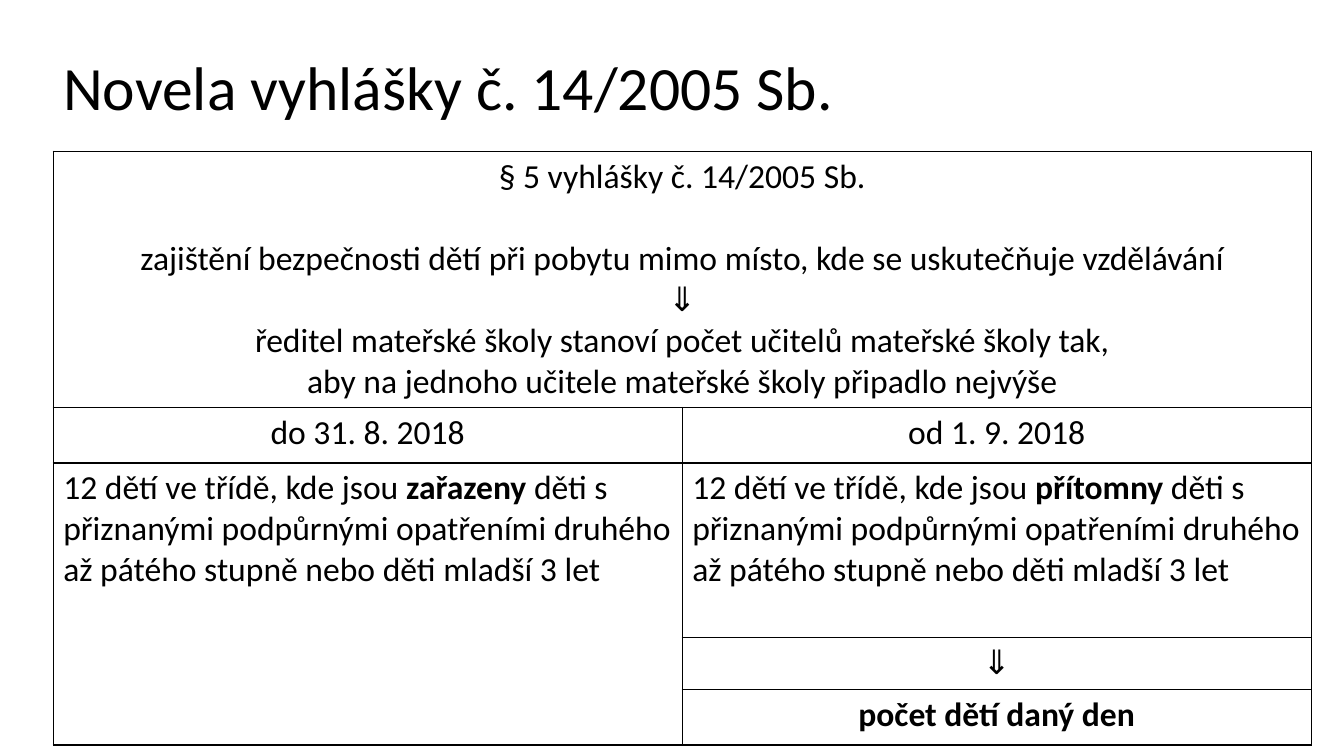
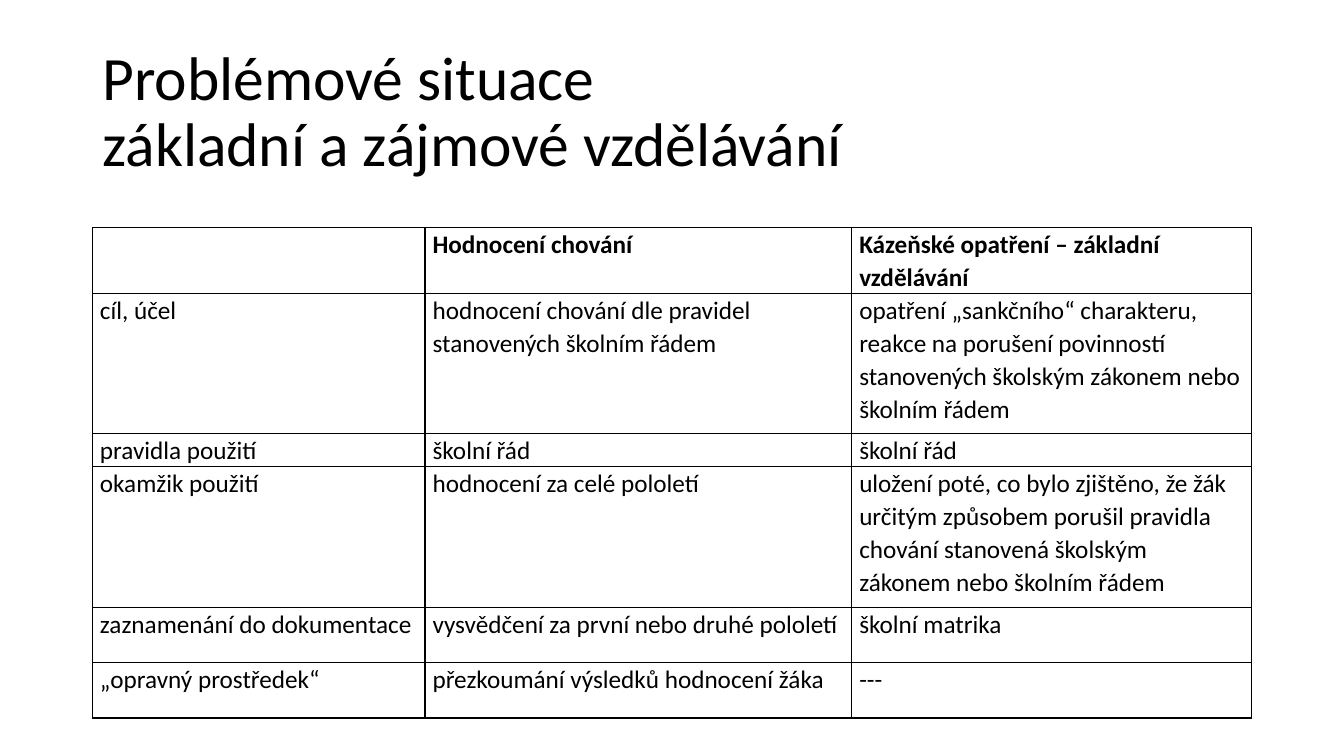
from lxml.etree import SubElement
from pptx import Presentation
from pptx.dml.color import RGBColor
from pptx.enum.text import MSO_ANCHOR, PP_ALIGN
from pptx.oxml.ns import qn
from pptx.util import Pt

FONT = "Calibri"
BLACK = "000000"
LINE_HEIGHT = 29.3  # one line of 24 pt text

# Text between ** marks is bold.
DECREE = {
    "title": "Novela vyhlášky č. 14/2005 Sb.",
    "title_box": (38, 29, 855, 71),
    "at": (38, 108),
    "cols": [449.3, 449.3],
    "rows": [183, 39.7, 125, 36.8, 39.7],
    "merges": [((0, 0), (0, 1)), ((2, 0), (4, 0))],
    "margins": (7.2, 3.6),
    "format": {"size": 24},
}
RULE = [
    "§ 5 vyhlášky č. 14/2005 Sb.",
    "zajištění bezpečnosti dětí při pobytu mimo místo, kde se uskutečňuje vzdělávání",
    "⇓",
    "ředitel mateřské školy stanoví počet učitelů mateřské školy tak,",
    "aby na jednoho učitele mateřské školy připadlo nejvýše",
]
LIMIT = ("12 dětí ve třídě, kde jsou **{}** děti s přiznanými podpůrnými opatřeními "
         "druhého až pátého stupně nebo děti mladší 3 let")
DECREE_CELLS = [
    ["\n".join(RULE), None],
    ["do 31. 8. 2018", "od 1. 9. 2018"],
    [LIMIT.format("zařazeny"), LIMIT.format("přítomny")],
    [None, "⇓"],
    [None, "**počet dětí daný den**"],
]

SITUATIONS = {
    "title": "Problémové situace\vzákladní a zájmové vzdělávání",
    "title_box": (66, 29, 828, 104),
    "at": (66, 162.5),
    "cols": [237.6, 304.8, 285.4],
    "rows": [47, 100.3, 23.6, 100.3, 39.6, 39.6],
    "merges": [],
    "margins": (5.4, 0),
    "format": {"size": 18, "spacing": 1.07},
}
SITUATION_CELLS = [
    ["", "**Hodnocení chování**", "**Kázeňské opatření – základní vzdělávání**"],
    ["cíl, účel", "hodnocení chování dle pravidel stanovených školním řádem",
     "opatření „sankčního“ charakteru, reakce na porušení povinností stanovených "
     "školským zákonem nebo školním řádem"],
    ["pravidla použití", "školní řád", "školní řád"],
    ["okamžik použití", "hodnocení za celé pololetí",
     "uložení poté, co bylo zjištěno, že žák určitým způsobem porušil pravidla chování "
     "stanovená školským zákonem nebo školním řádem"],
    ["zaznamenání do dokumentace", "vysvědčení za první nebo druhé pololetí", "školní matrika"],
    ["„opravný prostředek“", "přezkoumání výsledků hodnocení žáka", "---"],
]


def rgb(color):
    return RGBColor.from_string(color)


def write(tf, text, size=18, color=BLACK, align=PP_ALIGN.LEFT, spacing=1.0):
    """Write one paragraph per line; a \\v breaks the line inside a paragraph."""
    for i, line in enumerate(text.split("\n")):
        p = tf.add_paragraph() if i else tf.paragraphs[0]
        p.alignment = align
        p.line_spacing = spacing
        for j, part in enumerate(line.split("**")):
            for k, piece in enumerate(part.split("\v")):
                if k:
                    p.add_line_break()
                if not piece:
                    continue
                r = p.add_run()
                r.text = piece
                r.font.name = FONT
                r.font.size = Pt(size)
                r.font.bold = j % 2 == 1
                r.font.color.rgb = rgb(color)


def add_title(slide, text, box):
    sp = slide.shapes.add_textbox(*map(Pt, box))
    tf = sp.text_frame
    tf.word_wrap = True
    tf.vertical_anchor = MSO_ANCHOR.MIDDLE
    write(tf, text, size=44, spacing=0.9)


def set_borders(cell, color=BLACK, width=1):
    tc_pr = cell._tc.get_or_add_tcPr()
    for i, side in enumerate(("lnL", "lnR", "lnT", "lnB")):
        ln = SubElement(tc_pr, qn(f"a:{side}"), w=str(Pt(width)))
        fill = SubElement(ln, qn("a:solidFill"))
        SubElement(fill, qn("a:srgbClr"), val=color)
        tc_pr.insert(i, ln)


def add_grid(slide, layout, cells, align):
    """Add a bordered table; align(row, col) gives the alignment of a cell."""
    cols, rows = layout["cols"], layout["rows"]
    frame = slide.shapes.add_table(len(rows), len(cols), *map(Pt, layout["at"]),
                                   Pt(sum(cols)), Pt(sum(rows)))
    table = frame.table
    table.first_row = table.horz_banding = False
    for col, width in zip(table.columns, cols):
        col.width = Pt(width)
    for row, height in zip(table.rows, rows):
        row.height = Pt(height)
    for first, last in layout["merges"]:
        table.cell(*first).merge(table.cell(*last))
    side, top = map(Pt, layout["margins"])
    for i, texts in enumerate(cells):
        for j, text in enumerate(texts):
            cell = table.cell(i, j)
            cell.fill.background()
            set_borders(cell)
            cell.margin_left = cell.margin_right = side
            cell.margin_top = cell.margin_bottom = top
            if text:
                write(cell.text_frame, text, align=align(i, j), **layout["format"])
    return table


def add_table_slide(prs, layout, cells, align=lambda row, col: PP_ALIGN.LEFT):
    slide = prs.slides.add_slide(prs.slide_layouts[6])
    add_title(slide, layout["title"], layout["title_box"])
    return add_grid(slide, layout, cells, align)


def main():
    prs = Presentation()
    prs.slide_width, prs.slide_height = Pt(960), Pt(540)
    decree = add_table_slide(prs, DECREE, DECREE_CELLS,
                             lambda row, col: PP_ALIGN.LEFT if row == 2 else PP_ALIGN.CENTER)
    decree.cell(0, 0).text_frame.paragraphs[0].space_after = Pt(LINE_HEIGHT)
    add_table_slide(prs, SITUATIONS, SITUATION_CELLS)
    prs.save("out.pptx")


if __name__ == "__main__":
    main()
